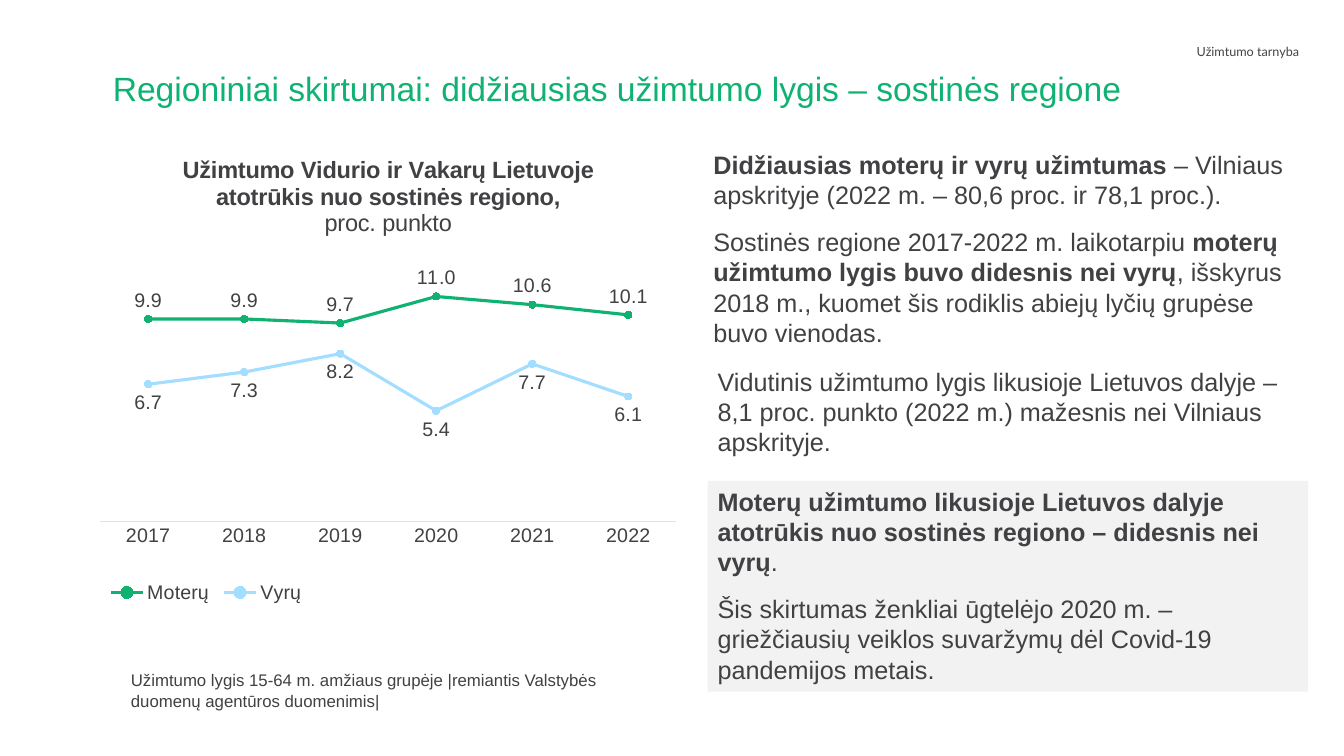
from dataclasses import dataclass

import pptx
import pptx.chart.data
import pptx.dml.color
import pptx.enum.chart
import pptx.enum.dml
import pptx.enum.shapes
import pptx.enum.text
import pptx.oxml
import pptx.oxml.ns
import pptx.util

Pt = pptx.util.Pt
RGB = pptx.dml.color.RGBColor.from_string
ALIGN = pptx.enum.text.PP_ALIGN


@dataclass(frozen=True)
class Theme:
    font: str = "Arial"
    header_font: str = "Lato"
    text: str = "414144"
    header: str = "434244"
    title: str = "0FB273"
    women: str = "0FB271"
    men: str = "A3DDFF"
    axis: str = "E2E2E3"
    panel: str = "F2F2F2"
    header_size: float = 9
    note_size: float = 12
    chart_size: float = 14
    chart_title_size: float = 16.8
    body_size: float = 18
    title_size: float = 24


THEME = Theme()


def style(font, size, color=THEME.text, name=THEME.font):
    font.size, font.name = Pt(size), name
    font.color.rgb = RGB(color)


def add_runs(paragraph, runs):
    """Add (text, bold) pairs as runs."""
    for text, bold in runs:
        run = paragraph.add_run()
        run.text = text
        run.font.bold = bold


def add_text(slide, box, paragraphs, size, color=THEME.text, name=THEME.font,
             align=ALIGN.LEFT, after=0, spacing=None, fill=None):
    shape = slide.shapes.add_textbox(*map(Pt, box))
    if fill:
        shape.fill.solid()
        shape.fill.fore_color.rgb = RGB(fill)
    frame = shape.text_frame
    frame.word_wrap = True
    for i, runs in enumerate(paragraphs):
        paragraph = frame.add_paragraph() if i else frame.paragraphs[0]
        add_runs(paragraph, runs)
        paragraph.alignment = align
        paragraph.space_after = Pt(after)
        if spacing:
            paragraph.line_spacing = spacing
        style(paragraph.font, size, color, name)


def place(element, index, **position):
    """Give a chart part a manual layout in fractions of the chart."""
    for layout in element.findall(pptx.oxml.ns.qn("c:layout")):
        element.remove(layout)
    target = '<c:layoutTarget val="inner"/>' if "h" in position and index == 0 else ""
    modes = '<c:xMode val="edge"/><c:yMode val="edge"/>'
    values = "".join(f'<c:{key} val="{value}"/>' for key, value in position.items())
    element.insert(index, pptx.oxml.parse_xml(
        f'<c:layout {pptx.oxml.ns.nsdecls("c")}><c:manualLayout>'
        f'{target}{modes}{values}</c:manualLayout></c:layout>'))


def add_gap_chart(slide, box):
    enum = pptx.enum.chart
    data = pptx.chart.data.CategoryChartData(number_format="0.0")
    data.categories = [str(year) for year in range(2017, 2023)]
    data.add_series("Moterų", (9.9, 9.9, 9.7, 11, 10.6, 10.1))
    data.add_series("Vyrų", (6.7, 7.3, 8.2, 5.4, 7.7, 6.1))
    chart = slide.shapes.add_chart(
        enum.XL_CHART_TYPE.LINE_MARKERS, *map(Pt, box), data).chart
    style(chart.font, THEME.chart_size)

    heading = chart.chart_title.text_frame
    lines = (("Užimtumo Vidurio ir Vakarų Lietuvoje", True),
             ("atotrūkis nuo sostinės regiono,", True),
             ("proc. punkto", False))
    for i, line in enumerate(lines):
        paragraph = heading.add_paragraph() if i else heading.paragraphs[0]
        add_runs(paragraph, [line])
        paragraph.alignment = ALIGN.CENTER
        style(paragraph.font, THEME.chart_title_size)
    chart.chart_title.include_in_layout = False

    chart.has_legend = True
    chart.legend.position = enum.XL_LEGEND_POSITION.BOTTOM
    chart.legend.include_in_layout = False
    style(chart.legend.font, THEME.chart_size)

    value_axis, year_axis = chart.value_axis, chart.category_axis
    value_axis.minimum_scale, value_axis.maximum_scale = 0, 12
    value_axis.has_major_gridlines = False
    value_axis.visible = False
    year_axis.major_tick_mark = enum.XL_TICK_MARK.NONE
    year_axis.format.line.color.rgb = RGB(THEME.axis)
    year_axis.format.line.width = Pt(0.75)
    style(year_axis.tick_labels.font, THEME.chart_size)

    plot = chart.plots[0]
    plot.vary_by_categories = False
    looks = ((THEME.women, enum.XL_LABEL_POSITION.ABOVE),
             (THEME.men, enum.XL_LABEL_POSITION.BELOW))
    for series, (color, label_position) in zip(plot.series, looks):
        series.smooth = False
        series.format.line.color.rgb = RGB(color)
        series.format.line.width = Pt(2.25)
        series.marker.style = enum.XL_MARKER_STYLE.CIRCLE
        series.marker.size = 5
        series.marker.format.fill.solid()
        series.marker.format.fill.fore_color.rgb = RGB(color)
        series.marker.format.line.color.rgb = RGB(color)
        labels = series.data_labels
        labels.show_value = True
        labels.position = label_position
        labels.number_format, labels.number_format_is_linked = "0.0", False
        style(labels.font, THEME.chart_size)

    root = chart._chartSpace
    place(root.xpath("c:chart/c:title")[0], 1, x=0.15, y=0.01)
    place(root.xpath("c:chart/c:legend")[0], 1, x=0.02, y=0.93, w=0.35, h=0.07)
    place(root.xpath("c:chart/c:plotArea")[0], 0, x=0.016, y=0.278, w=0.972, h=0.532)


def add_header(slide, left, top, width):
    add_text(slide, (left + width - 274, top, 324, 34), [[("Užimtumo tarnyba", None)]],
             THEME.header_size, THEME.header, THEME.header_font, ALIGN.RIGHT)
    add_text(slide, (left, top + 20, width, 40),
             [[("Regioniniai skirtumai: didžiausias užimtumo lygis – sostinės regione", None)]],
             THEME.title_size, THEME.title, spacing=0.9)


def add_findings(slide, left, top, width):
    capital = [
        [("Didžiausias moterų ir vyrų užimtumas ", True),
         ("– Vilniaus apskrityje (2022 m. – 80,6 proc. ir 78,1 proc.).", False)],
        [("Sostinės regione 2017-2022 m. laikotarpiu ", False),
         ("moterų užimtumo lygis buvo didesnis nei vyrų", True),
         (", išskyrus 2018 m., kuomet šis rodiklis abiejų lyčių grupėse buvo vienodas.", False)]]
    elsewhere = [
        [("Vidutinis užimtumo lygis likusioje Lietuvos dalyje – 8,1 proc. punkto "
          "(2022 m.) mažesnis nei Vilniaus apskrityje.", False)]]
    conclusion = [
        [("Moterų užimtumo likusioje Lietuvos dalyje atotrūkis nuo sostinės regiono "
          "– didesnis nei vyrų", True), (".", False)],
        [("Šis skirtumas ženkliai ūgtelėjo 2020 m. – griežčiausių veiklos suvaržymų "
          "dėl Covid-19 pandemijos metais.", False)]]
    indent = left + 3
    for box, paragraphs, fill in (
            ((left, top, width, 150.5), capital, None),
            ((indent, top + 154.8, width - 6, 72.7), elsewhere, None),
            ((indent, top + 240.5, width, 150.5), conclusion, THEME.panel)):
        add_text(slide, box, paragraphs, THEME.body_size, after=12, fill=fill)


def add_source_note(slide, box):
    add_text(slide, box, [[("Užimtumo lygis 15-64 m. amžiaus grupėje |remiantis Valstybės "
                            "duomenų agentūros duomenimis|", None)]], THEME.note_size)


def main():
    deck = pptx.Presentation()
    deck.slide_width, deck.slide_height = Pt(960), Pt(540)
    slide = deck.slides.add_slide(deck.slide_layouts[6])
    add_header(slide, 73.5, 28.1, 811.5)
    add_findings(slide, 502.5, 103, 429)
    add_source_note(slide, (86.4, 475.2, 385.2, 36))
    add_gap_chart(slide, (64.8, 105.8, 423.4, 329))
    deck.save("out.pptx")


if __name__ == "__main__":
    main()
